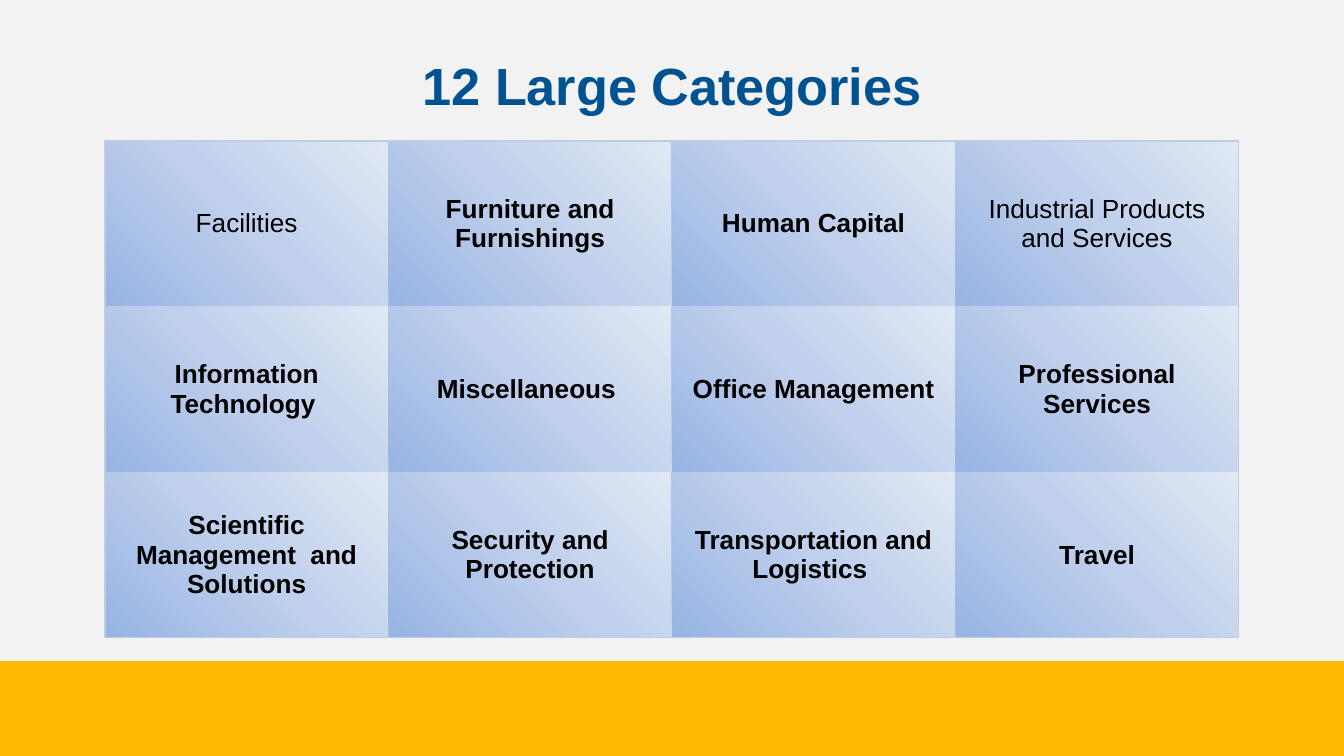
import pptx
import pptx.dml.color
import pptx.enum.shapes
import pptx.enum.text
import pptx.oxml
import pptx.oxml.ns
import pptx.util

EMU_PER_PX = 914400 / 134.4
MIDDLE = pptx.enum.text.MSO_ANCHOR.MIDDLE
CENTER = pptx.enum.text.PP_ALIGN.CENTER


def px(length):
    return pptx.util.Emu(round(length * EMU_PER_PX))


def add_text(frame, text, size, color, bold):
    para = frame.paragraphs[0]
    para.alignment = CENTER
    span = para.add_run()
    span.text = text
    span.font.name = "Arial"
    span.font.size = pptx.util.Pt(size)
    span.font.bold = bold
    span.font.color.rgb = pptx.dml.color.RGBColor.from_string(color)


deck = pptx.Presentation()
deck.slide_width, deck.slide_height = px(1344), px(756)
page = deck.slides.add_slide(deck.slide_layouts[6])

# Grey page area and yellow footer band
for top, height, color in [(661, 95, "FFBA00"), (0, 661, "F2F2F2")]:
    band = page.shapes.add_shape(
        pptx.enum.shapes.MSO_SHAPE.RECTANGLE, 0, px(top), px(1344), px(height))
    band.shadow.inherit = False
    band.fill.solid()
    band.fill.fore_color.rgb = pptx.dml.color.RGBColor.from_string(color)
    band.line.fill.background()

# Category table
categories = [
    ["Facilities", "Furniture and Furnishings", "Human Capital",
     "Industrial Products and Services"],
    ["Information Technology ", "Miscellaneous ", "Office Management",
     "Professional Services"],
    ["Scientific Management  and Solutions", "Security and Protection",
     "Transportation and Logistics ", "Travel"],
]
regular = {"Facilities", "Industrial Products and Services"}
last_row, last_column = len(categories) - 1, len(categories[0]) - 1
table = page.shapes.add_table(
    last_row + 1, last_column + 1, px(105), px(141), px(1134), px(497)).table
table.first_row = False
table.horz_banding = False

namespace = pptx.oxml.ns.nsdecls("a")
gradient = (
    f'<a:gradFill {namespace} rotWithShape="1"><a:gsLst>'
    + "".join(f'<a:gs pos="{pos * 1000}"><a:srgbClr val="{color}"/></a:gs>'
              for pos, color in [(0, "97B4E4"), (50, "BFCFEC"), (100, "E0E8F4")])
    + '</a:gsLst><a:lin ang="18900000" scaled="0"/></a:gradFill>')
edge_fill = '<a:solidFill><a:srgbClr val="C0CCE1"/></a:solidFill>'

for row, names in enumerate(categories):
    for column, name in enumerate(names):
        cell = table.cell(row, column)
        cell.vertical_anchor = MIDDLE
        cell.margin_left = cell.margin_right = px(13)
        cell.margin_top = cell.margin_bottom = px(5)
        add_text(cell.text_frame, name, 14, "000000", name not in regular)

        # Only the outer edge of the table has a border
        properties = cell._tc.get_or_add_tcPr()
        outer = {"L": column == 0, "R": column == last_column,
                 "T": row == 0, "B": row == last_row}
        for side, is_outer in outer.items():
            fill = edge_fill if is_outer else "<a:noFill/>"
            properties.append(pptx.oxml.parse_xml(
                f'<a:ln{side} {namespace} w="9525">{fill}</a:ln{side}>'))
        properties.append(pptx.oxml.parse_xml(gradient))

# Title
title = page.shapes.add_textbox(px(67), px(38), px(1210), px(93))
frame = title.text_frame
frame.word_wrap = True
frame.vertical_anchor = MIDDLE
frame.margin_left = frame.margin_right = px(13)
frame.margin_top = frame.margin_bottom = px(13)
add_text(frame, "12 Large Categories", 28, "005390", True)

deck.save("out.pptx")
